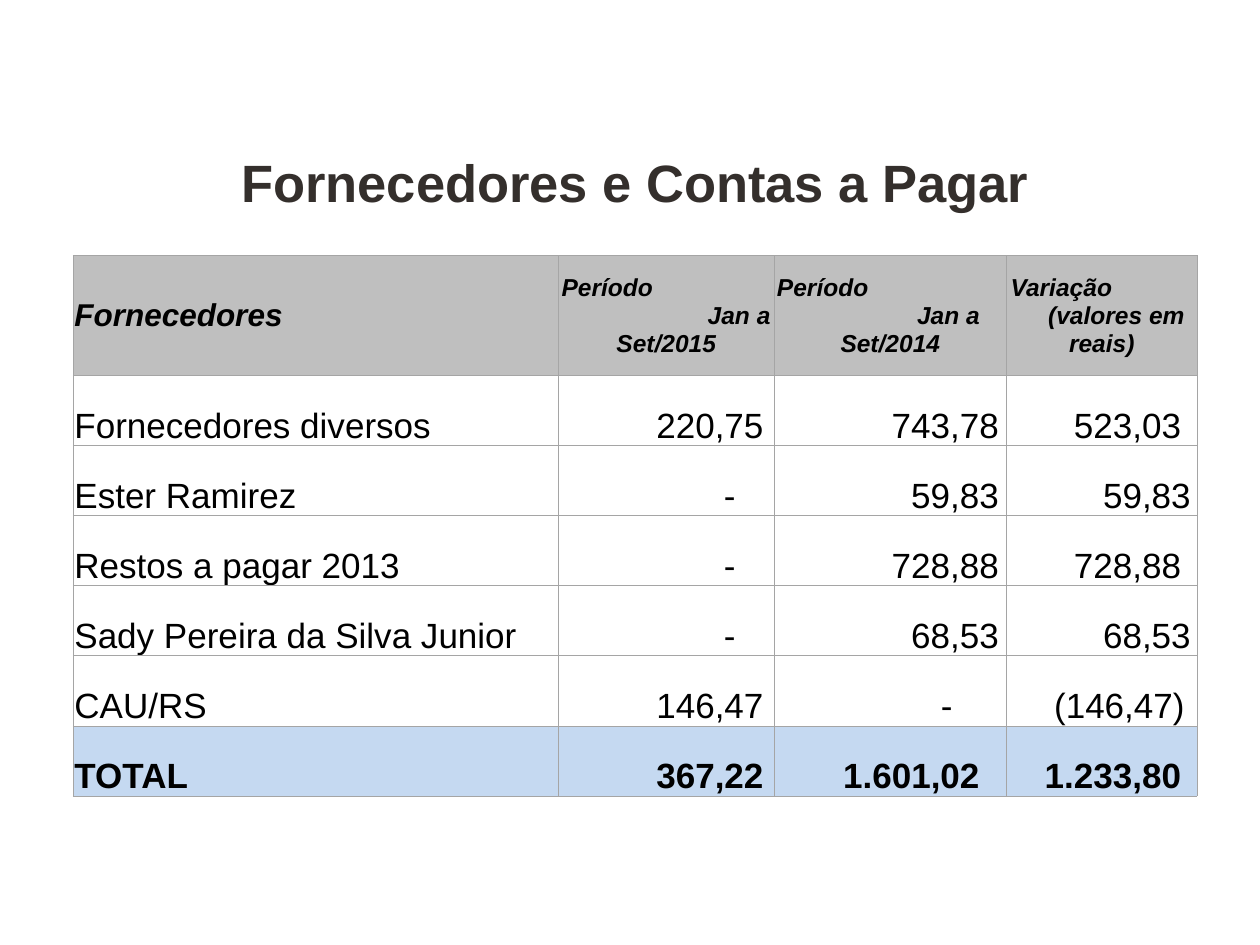
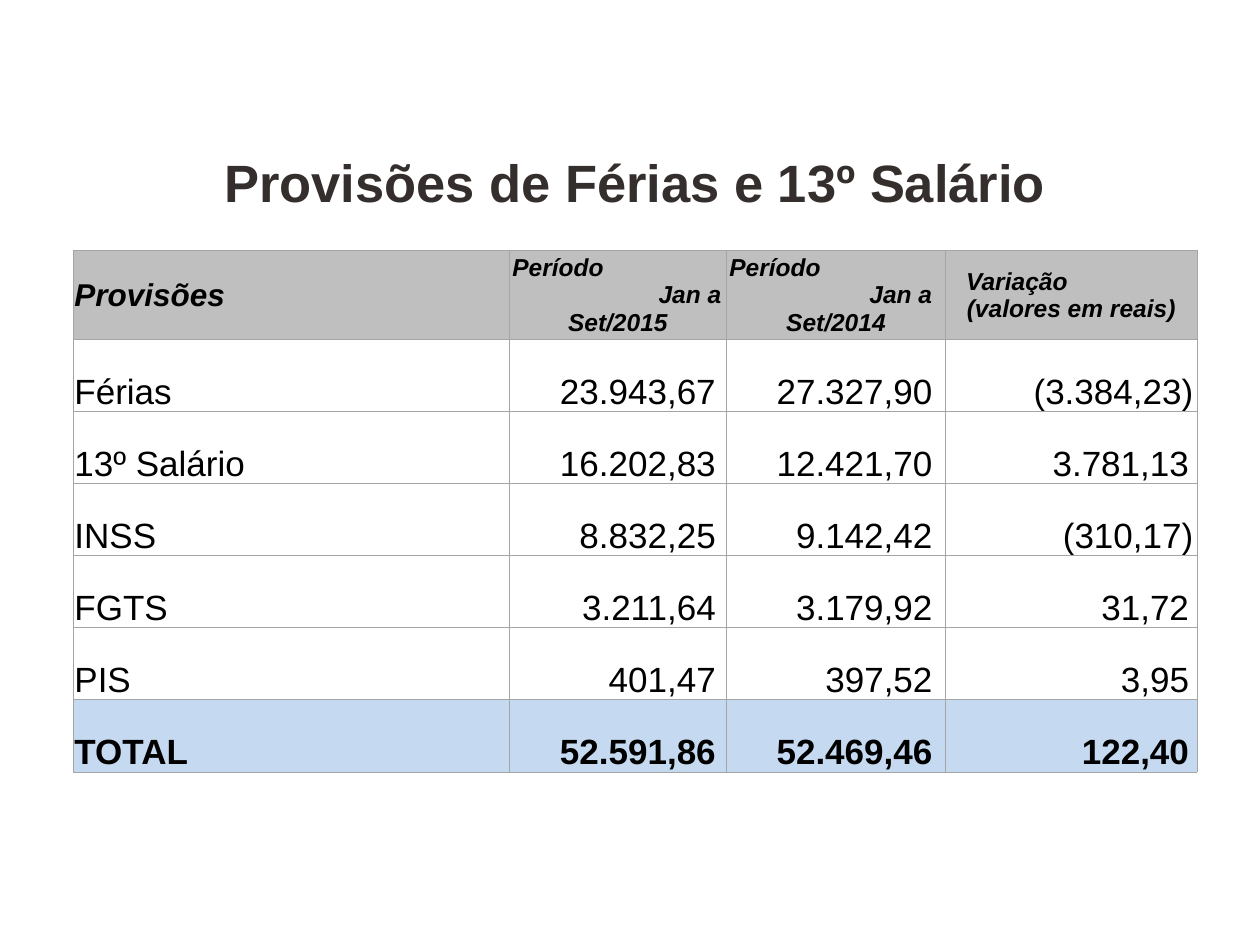
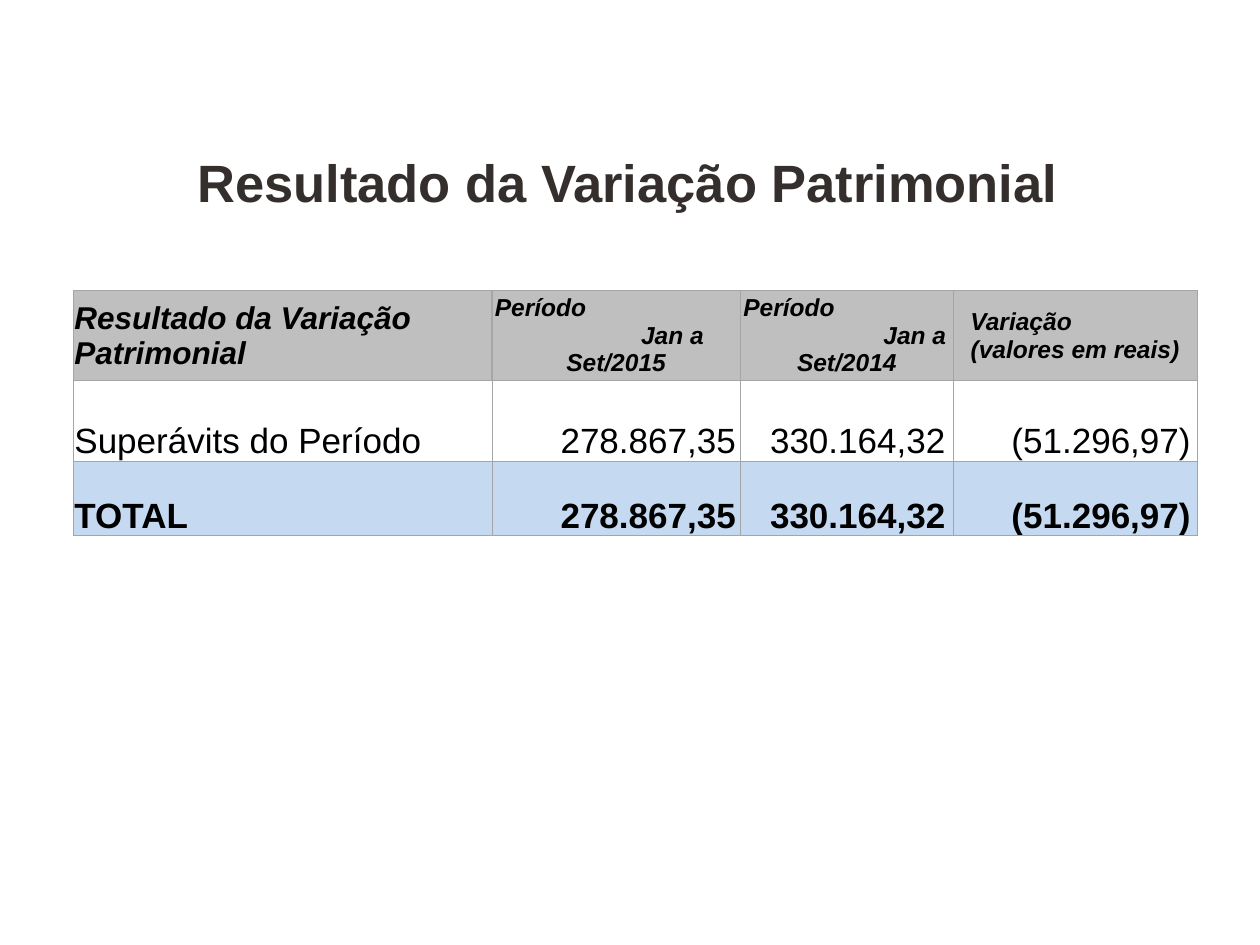
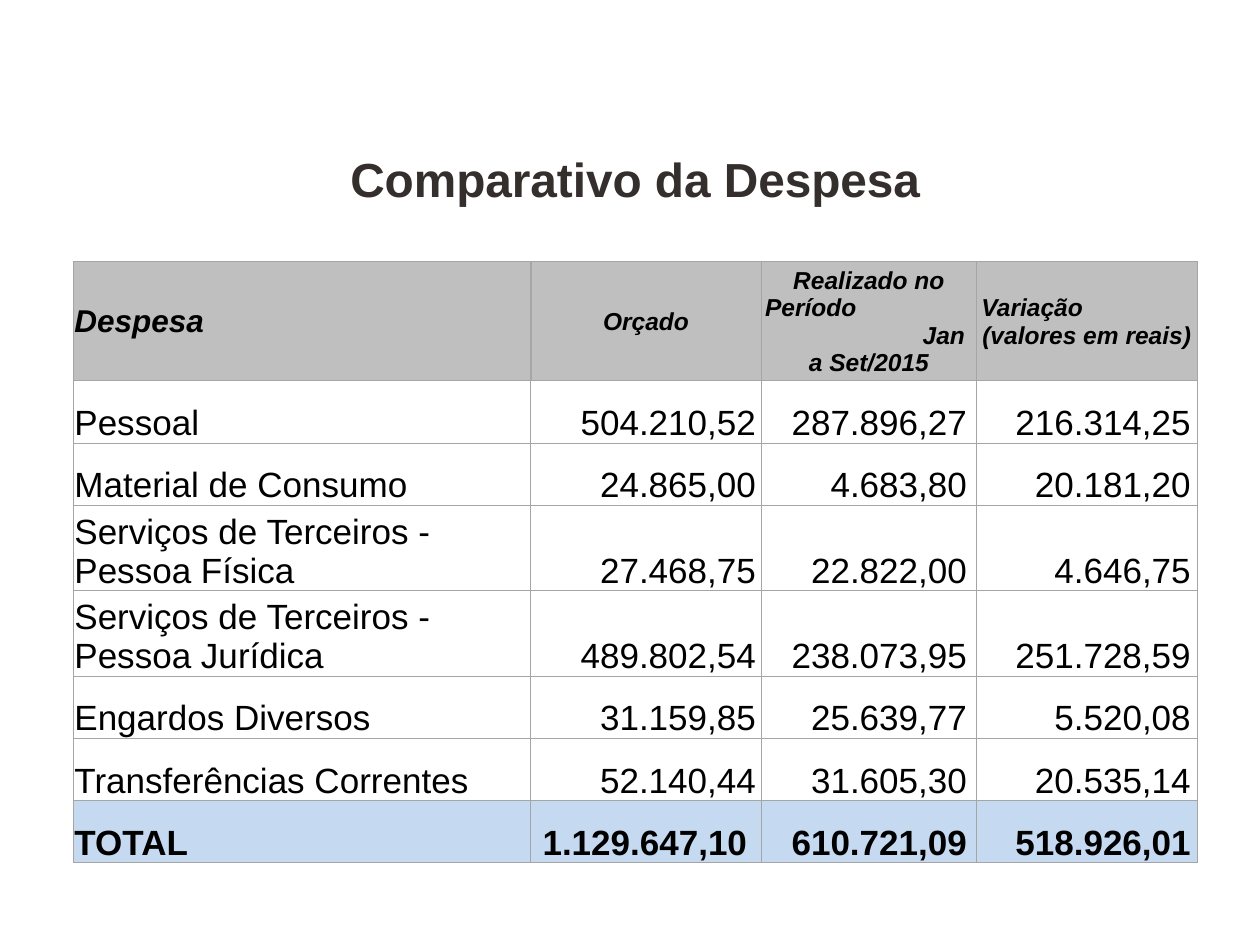
from lxml import etree
from pptx import Presentation
from pptx.dml.color import RGBColor
from pptx.enum import text
from pptx.oxml import ns
from pptx.util import Pt

INK = RGBColor(0x34, 0x2F, 0x2C)
BLACK = RGBColor(0, 0, 0)
HEADER_GREY = RGBColor(0xBF, 0xBF, 0xBF)
TOTAL_BLUE = RGBColor(0xC5, 0xD9, 0xF1)
GRID = RGBColor(0xA5, 0xA5, 0xA5)
DIVIDER = RGBColor(0xA6, 0xA6, 0xA6)

LEFT = 41.8
WIDTH = 642.2
CENTER = text.PP_ALIGN.CENTER
RIGHT = text.PP_ALIGN.RIGHT


def period(year, month_indent):
    """Return the header lines of a period column as (text, left indent)."""
    return [("Período", 1), ("Jan a", month_indent), (f"Set/{year}", None)]


def variation(indent):
    """Return the header lines of the two-line variation column."""
    return [("Variação", indent), ("(valores em reais)", None)]


PERIODS = [period(2015, 84.5), period(2014, 81)]


class Report:
    """Holds the deck, its style and the current page."""

    font = "Arial"

    def __init__(self):
        """Open an empty 10 by 7.5 inch deck."""
        self.deck = Presentation()
        self.deck.slide_width, self.deck.slide_height = Pt(720), Pt(540)
        self.page = None

    def add_page(self, title, size=30):
        """Start a page and set its centred title."""
        self.page = self.deck.slides.add_slide(self.deck.slide_layouts[6])
        box = self.page.shapes.add_textbox(Pt(LEFT), Pt(79.2), Pt(WIDTH), Pt(39.6))
        frame = box.text_frame
        frame.word_wrap = True
        frame.margin_top, frame.margin_bottom = Pt(6.3), 0
        para = frame.paragraphs[0]
        para.alignment = CENTER
        self.add_span(para, title, size, INK, bold=True)

    def add_span(self, para, words, size, color, bold=False, italic=False):
        """Add one styled run to a paragraph."""
        span = para.add_run()
        span.text = words
        font = span.font
        font.name, font.size = self.font, Pt(size)
        font.bold, font.italic = bold, italic
        font.color.rgb = color

    def border(self, cell, side, color=GRID, width=0.5):
        """Draw one side of a cell."""
        line = etree.SubElement(cell._tc.get_or_add_tcPr(), ns.qn(f"a:ln{side}"), w=str(Pt(width)))
        fill = etree.SubElement(line, ns.qn("a:solidFill"))
        etree.SubElement(fill, ns.qn("a:srgbClr"), val=str(color))

    def frame_cell(self, cell, fill, thick_side=None):
        """Set the borders, fill and insets of a cell."""
        for side in "LRTB":
            if side == thick_side:
                self.border(cell, side, DIVIDER, 1)
            else:
                self.border(cell, side)
        if fill is None:
            cell.fill.background()
        else:
            cell.fill.solid()
            cell.fill.fore_color.rgb = fill
        cell.margin_left = cell.margin_right = cell.margin_top = Pt(0.72)
        cell.margin_bottom = 0

    def header_cell(self, cell, lines, size):
        """Fill in header lines, indented from the left or centred."""
        cell.vertical_anchor = text.MSO_ANCHOR.MIDDLE
        frame = cell.text_frame
        for number, (words, indent) in enumerate(lines):
            para = frame.add_paragraph() if number else frame.paragraphs[0]
            if indent is None:
                para.alignment = CENTER
            else:
                para._p.get_or_add_pPr().set("marL", str(Pt(indent)))
            self.add_span(para, words, size, BLACK, bold=True, italic=True)

    def body_cell(self, cell, value, inset, bold):
        """Fill in a label, or a figure kept at an inset from the right edge."""
        cell.vertical_anchor = text.MSO_ANCHOR.BOTTOM
        if isinstance(value, tuple):
            value, inset = value
        para = cell.text_frame.paragraphs[0]
        if inset is not None:
            para.alignment = RIGHT
            cell.margin_right = Pt(inset)
        self.add_span(para, value, 20, BLACK, bold=bold)

    def add_table(self, top, widths, heights, headers, insets, rows):
        """Add a statement table whose last row is the total."""
        shape = self.page.shapes.add_table(
            len(rows) + 1, len(widths), Pt(LEFT), Pt(top), Pt(WIDTH), Pt(sum(heights)))
        table = shape.table
        table.first_row = table.horz_banding = False
        for column, width in zip(table.columns, widths):
            column.width = Pt(width)
        for row, height in zip(table.rows, heights):
            row.height = Pt(height)
        for index, lines in enumerate(headers):
            cell = table.cell(0, index)
            self.frame_cell(cell, HEADER_GREY, {0: "R", 1: "L"}.get(index))
            self.header_cell(cell, lines, 14 if index else 18)
        for number, values in enumerate(rows, 1):
            is_total = number == len(rows)
            for index, (value, inset) in enumerate(zip(values, [None, *insets])):
                cell = table.cell(number, index)
                self.frame_cell(cell, TOTAL_BLUE if is_total else None)
                self.body_cell(cell, value, inset, is_total)


def main():
    """Build the four statements and save the deck."""
    report = Report()

    report.add_page("Fornecedores e Contas a Pagar")
    report.add_table(
        146, [277.4, 123.1, 133, 108.7], [68.4] + [40.1] * 6,
        [[("Fornecedores", 0)], *PERIODS,
         [("Variação", 1.5), ("(valores em", 23), ("reais)", None)]],
        [6, 4.5, 9],
        [["Fornecedores diversos", "220,75", "743,78", "523,03"],
         ["Ester Ramirez", ("-", 22), "59,83", ("59,83", 3.5)],
         ["Restos a pagar 2013", ("-", 22), "728,88", "728,88"],
         ["Sady Pereira da Silva Junior", ("-", 22), "68,53", ("68,53", 3.5)],
         ["CAU/RS", "146,47", ("-", 31), ("(146,47)", 7)],
         ["TOTAL", "367,22", ("1.601,02", 15.5), "1.233,80"]])

    report.add_page("Provisões de Férias e 13º Salário")
    report.add_table(
        142.8, [249.3, 124, 125.3, 143.6], [51] + [41.2] * 6,
        [[("Provisões", 0)], *PERIODS, variation(11)],
        [6, 7.5, 4.5],
        [["Férias", "23.943,67", "27.327,90", ("(3.384,23)", 2)],
         ["13º Salário", "16.202,83", "12.421,70", "3.781,13"],
         ["INSS", "8.832,25", "9.142,42", ("(310,17)", 2)],
         ["FGTS", "3.211,64", "3.179,92", "31,72"],
         ["PIS", "401,47", "397,52", "3,95"],
         ["TOTAL", "52.591,86", "52.469,46", "122,40"]])

    report.add_page("Resultado da Variação Patrimonial ")
    report.add_table(
        166, [239.3, 142, 121.7, 139.2], [51, 46.3, 42.7],
        [[("Resultado da Variação Patrimonial", 0)], *PERIODS, variation(9)],
        [2.5, 4.5, 3.5],
        [["Superávits do Período", "278.867,35", "330.164,32", "(51.296,97)"],
         ["TOTAL", "278.867,35", "330.164,32", "(51.296,97)"]])

    report.add_page("Comparativo da Despesa", 27.3)
    report.add_table(
        149.6, [261.5, 131.7, 123.1, 125.9],
        [67.8, 35.6, 35.6, 48.8, 48.8, 35.6, 35.6, 35.6],
        [[("Despesa", 0)], [("Orçado", None)],
         [("Realizado no", None), ("Período", 1.5), ("Jan", 91.5), ("a Set/2015", None)],
         variation(2)],
        [3, 5.5, 3.5],
        [["Pessoal", "504.210,52", "287.896,27", "216.314,25"],
         ["Material de Consumo", "24.865,00", "4.683,80", "20.181,20"],
         ["Serviços de Terceiros - Pessoa Física", "27.468,75", "22.822,00", "4.646,75"],
         ["Serviços de Terceiros - Pessoa Jurídica", "489.802,54", "238.073,95", "251.728,59"],
         ["Engardos Diversos", "31.159,85", "25.639,77", "5.520,08"],
         ["Transferências Correntes", "52.140,44", "31.605,30", "20.535,14"],
         ["TOTAL", ("1.129.647,10", 8), "610.721,09", "518.926,01"]])

    report.deck.save("out.pptx")


if __name__ == "__main__":
    main()
